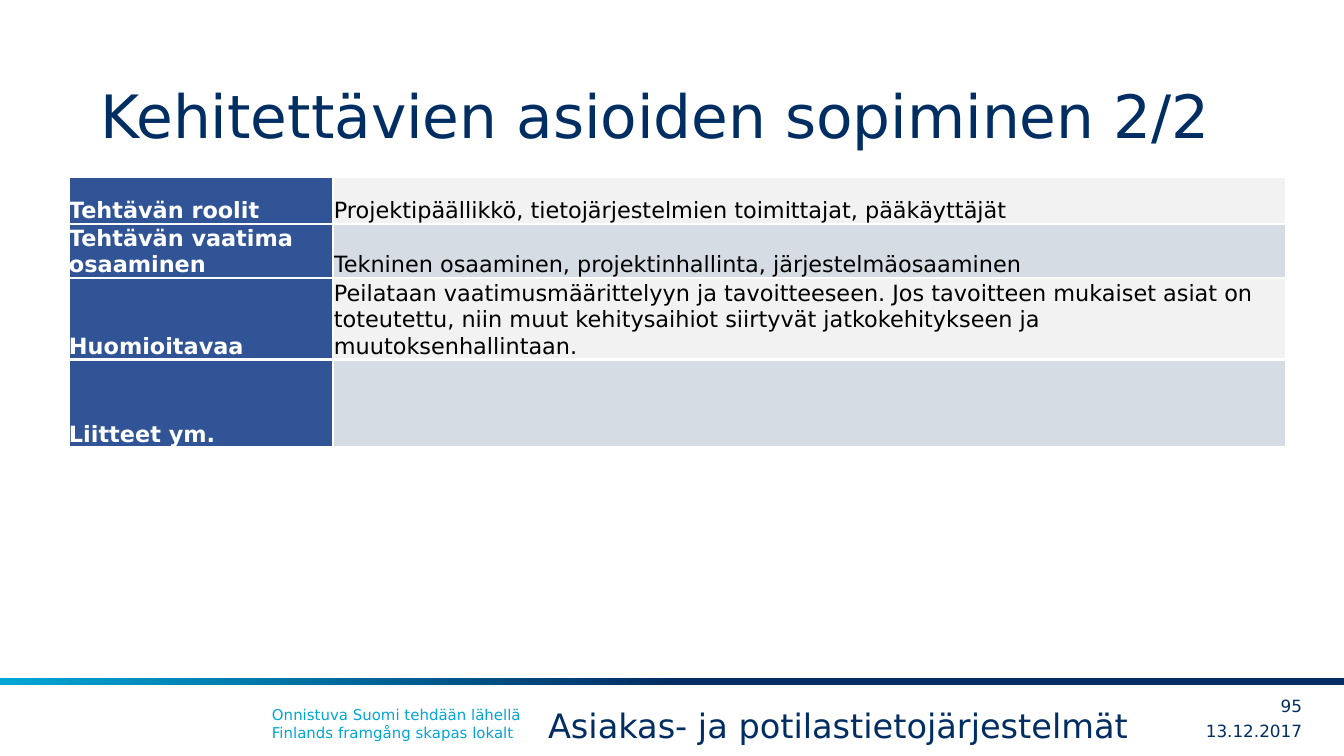
from lxml import etree
from pptx import Presentation, util as u
from pptx.dml.color import RGBColor
from pptx.enum import shapes, text
from pptx.oxml.ns import qn

FONT = "DejaVu Sans"
COLORS = {"navy": "002E63", "cyan": "00A6D6", "label": "305496", "light": "F2F2F2",
          "grey": "D6DCE4", "white": "FFFFFF", "black": "000000"}
SLIDE_SIZE = (1344, 756)
BAR_BOX = (0, 678, 1344, 7)
MIDDLE, BOTTOM, TOP = text.MSO_ANCHOR.MIDDLE, text.MSO_ANCHOR.BOTTOM, text.MSO_ANCHOR.TOP
LEFT, RIGHT = text.PP_ALIGN.LEFT, text.PP_ALIGN.RIGHT

TEXTS = [
    ("Onnistuva Suomi tehdään lähellä\vFinlands framgång skapas lokalt",
     (259, 699, 879, 50), 8, "cyan", TOP, LEFT, (13, 7), True),
    ("13.12.2017", (1169, 716, 133, 30), 9, "navy", MIDDLE, RIGHT, (0, 0), True),
    ("95", (1244, 691, 58, 30), 9, "navy", MIDDLE, RIGHT, (0, 0), True),
    ("Kehitettävien asioiden sopiminen 2/2",
     (100, 31, 1143, 126), 32, "navy", BOTTOM, LEFT, (0, 7), True),
    ("Asiakas- ja potilastietojärjestelmät",
     (535, 698, 622, 54), 18, "navy", TOP, LEFT, (13, 7), False),
]

TABLE_ORIGIN = (69, 177)
COLUMN_WIDTHS = (264, 953)
TASK_ROWS = [
    (47, "Tehtävän roolit", "Projektipäällikkö, tietojärjestelmien toimittajat, pääkäyttäjät"),
    (52, "Tehtävän vaatima osaaminen", "Tekninen osaaminen, projektinhallinta, järjestelmäosaaminen"),
    (81, "Huomioitavaa", "Peilataan vaatimusmäärittelyyn ja tavoitteeseen. Jos tavoitteen mukaiset "
     "asiat on toteutettu, niin muut kehitysaihiot siirtyvät jatkokehitykseen ja muutoksenhallintaan."),
    (88, "Liitteet ym.", ""),
]


def px(value):
    return u.Emu(round(value * 914400 / 134.4))


def rgb(name):
    return RGBColor.from_string(COLORS[name])


def style(paragraph, size, color, bold=False):
    for run in paragraph.runs:
        run.font.name = FONT
        run.font.size = u.Pt(size)
        run.font.bold = bold
        run.font.color.rgb = rgb(color)


def add_text(slide, content, box, size, color, anchor, align, insets, wrap):
    frame = slide.shapes.add_textbox(*map(px, box)).text_frame
    frame.word_wrap = wrap
    frame.vertical_anchor = anchor
    frame.margin_left = frame.margin_right = px(insets[0])
    frame.margin_top = frame.margin_bottom = px(insets[1])
    paragraph = frame.paragraphs[0]
    paragraph.text = content
    paragraph.alignment = align
    style(paragraph, size, color)


def add_borders(cell):
    properties = cell._tc.get_or_add_tcPr()
    for index, side in enumerate(("a:lnL", "a:lnR", "a:lnT", "a:lnB")):
        line = etree.Element(qn(side), w=str(u.Pt(1.5)))
        fill = etree.SubElement(line, qn("a:solidFill"))
        etree.SubElement(fill, qn("a:srgbClr"), val=COLORS["white"])
        properties.insert(index, line)


def fill_cell(cell, content, fill, color, bold, inset):
    cell.margin_left = cell.margin_right = cell.margin_top = px(inset)
    cell.margin_bottom = 0
    cell.vertical_anchor = BOTTOM
    cell.fill.solid()
    cell.fill.fore_color.rgb = rgb(fill)
    add_borders(cell)
    if content:
        cell.text_frame.text = content
        style(cell.text_frame.paragraphs[0], 12, color, bold)


def add_task_table(slide):
    size = (sum(COLUMN_WIDTHS), sum(row[0] for row in TASK_ROWS))
    table = slide.shapes.add_table(len(TASK_ROWS), len(COLUMN_WIDTHS),
                                   *map(px, TABLE_ORIGIN + size)).table
    table.first_row = table.horz_banding = False
    for column, width in zip(table.columns, COLUMN_WIDTHS):
        column.width = px(width)
    for index, (height, label, description) in enumerate(TASK_ROWS):
        table.rows[index].height = px(height)
        fill_cell(table.cell(index, 0), label, "label", "white", True, 0)
        fill_cell(table.cell(index, 1), description, ("light", "grey")[index % 2], "black", False, 1)


def add_footer_bar(slide):
    bar = slide.shapes.add_shape(shapes.MSO_SHAPE.RECTANGLE, *map(px, BAR_BOX))
    bar.shadow.inherit = False
    bar.line.fill.background()
    bar.fill.gradient()
    bar.fill.gradient_angle = 180
    for stop, (position, color) in zip(bar.fill.gradient_stops, ((0.5, "navy"), (1, "cyan"))):
        stop.position = position
        stop.color.rgb = rgb(color)


def main():
    deck = Presentation()
    deck.slide_width, deck.slide_height = map(px, SLIDE_SIZE)
    slide = deck.slides.add_slide(deck.slide_layouts[6])
    add_footer_bar(slide)
    for item in TEXTS:
        add_text(slide, *item)
    add_task_table(slide)
    deck.save("out.pptx")


if __name__ == "__main__":
    main()
